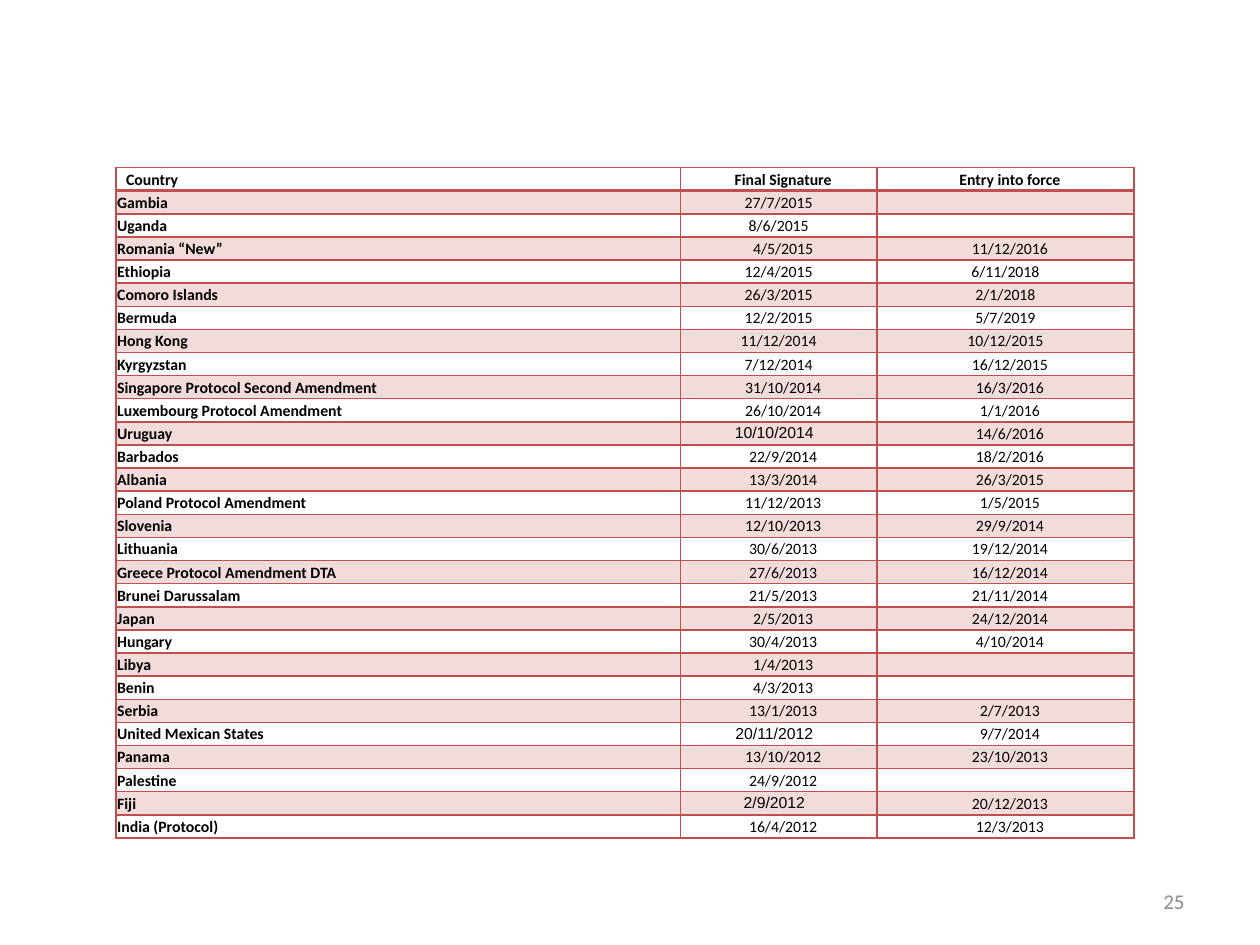
from lxml.etree import SubElement
from pptx import Presentation
from pptx.dml.color import RGBColor
from pptx.enum.text import MSO_ANCHOR as ANCHOR, PP_ALIGN as ALIGN
from pptx.oxml.ns import qn
from pptx.util import Inches, Pt

FONT = "Calibri"
RED, BLACK, GRAY = "C0504D", "000000", "8C8C8C"
HEADINGS = ("Country", "Final Signature", "Entry into force")
TREATIES = [
    ("Gambia", "27/7/2015", ""),
    ("Uganda", "8/6/2015", ""),
    ("Romania “New”", "4/5/2015", "11/12/2016"),
    ("Ethiopia", "12/4/2015", "6/11/2018"),
    ("Comoro Islands", "26/3/2015", "2/1/2018"),
    ("Bermuda", "12/2/2015", "5/7/2019"),
    ("Hong Kong", "11/12/2014", "10/12/2015"),
    ("Kyrgyzstan", "7/12/2014", "16/12/2015"),
    ("Singapore Protocol Second Amendment", "31/10/2014", "16/3/2016"),
    ("Luxembourg Protocol Amendment", "26/10/2014", "1/1/2016"),
    ("Uruguay", "10/10/2014", "14/6/2016"),
    ("Barbados", "22/9/2014", "18/2/2016"),
    ("Albania", "13/3/2014", "26/3/2015"),
    ("Poland Protocol Amendment", "11/12/2013", "1/5/2015"),
    ("Slovenia", "12/10/2013", "29/9/2014"),
    ("Lithuania", "30/6/2013", "19/12/2014"),
    ("Greece Protocol Amendment DTA", "27/6/2013", "16/12/2014"),
    ("Brunei Darussalam", "21/5/2013", "21/11/2014"),
    ("Japan", "2/5/2013", "24/12/2014"),
    ("Hungary", "30/4/2013", "4/10/2014"),
    ("Libya", "1/4/2013", ""),
    ("Benin", "4/3/2013", ""),
    ("Serbia", "13/1/2013", "2/7/2013"),
    ("United Mexican States", "20/11/2012", "9/7/2014"),
    ("Panama", "13/10/2012", "23/10/2013"),
    ("Palestine", "24/9/2012", ""),
    ("Fiji", "2/9/2012", "20/12/2013"),
    ("India (Protocol)", "16/4/2012", "12/3/2013"),
]
FLUSH_SIGNATURES = {"Gambia", "Uganda", "Ethiopia", "Comoro Islands", "Bermuda",
                    "Hong Kong", "Kyrgyzstan"}
FLUSH_ENTRIES = {"Ethiopia", "Comoro Islands", "Bermuda", "Hong Kong"}
RTL_SIGNATURES = {"Uruguay", "United Mexican States", "Fiji"}


def rgb(color):
    """Turn a hex string into a colour."""
    return RGBColor.from_string(color)


def add_run(p, text, size, color, bold=False):
    """Add one formatted run to a paragraph."""
    r = p.add_run()
    r.text = text
    r.font.name, r.font.size, r.font.bold = FONT, Pt(size), bold
    r.font.color.rgb = rgb(color)
    return r


def set_borders(cell, top, bottom):
    """Draw the four borders of a cell."""
    tc_pr = cell._tc.get_or_add_tcPr()
    for side, width in (("L", 1), ("R", 1), ("T", top), ("B", bottom)):
        ln = SubElement(tc_pr, qn(f"a:ln{side}"), w=str(Pt(width)))
        fill = SubElement(ln, qn("a:solidFill"))
        SubElement(fill, qn("a:srgbClr"), val=RED)


def set_fill(cell, banded):
    """Tint a banded cell and leave the others clear."""
    if not banded:
        cell.fill.background()
        return
    cell.fill.solid()
    cell.fill.fore_color.rgb = rgb(RED)
    color = cell._tc.tcPr.find(f"{qn('a:solidFill')}/{qn('a:srgbClr')}")
    SubElement(color, qn("a:alpha"), val="20000")


def set_text(cell, text, align, bold, indented, rtl):
    """Write the single paragraph of a cell."""
    cell.margin_left = cell.margin_right = Inches(0.01)
    cell.margin_top = cell.margin_bottom = Inches(0.01)
    p = cell.text_frame.paragraphs[0]
    if not text:
        SubElement(p._p, qn("a:endParaRPr"), sz="900")
        return
    p.alignment, p.line_spacing = align, 1.07
    p_pr = p._p.get_or_add_pPr()
    if indented:
        p_pr.set("marL", str(Inches(0.07)))
    r = add_run(p, text, 9, BLACK, bold)
    if rtl:
        p_pr.set("rtl", "1")
        SubElement(r._r.get_or_add_rPr(), qn("a:cs"), typeface="Arial")


def is_indented(row, col, country):
    """Tell whether the text of a cell has a left indent."""
    if row == 0:
        return True
    if col == 0:
        return False
    return country not in (FLUSH_SIGNATURES if col == 1 else FLUSH_ENTRIES)


def add_treaty_table(slide):
    """Add the table of treaties and their dates."""
    rows = [HEADINGS] + TREATIES
    frame = slide.shapes.add_table(len(rows), len(HEADINGS), Inches(0.92), Inches(1.33),
                                   Inches(8.08), Inches(5.33))
    table = frame.table
    table.first_row = table.horz_banding = False
    for column, width in zip(table.columns, (4.48, 1.56, 2.04)):
        column.width = Inches(width)
    for i, values in enumerate(rows):
        table.rows[i].height = Inches(5.33 / len(rows))
        for j, text in enumerate(values):
            cell = table.cell(i, j)
            set_borders(cell, 2 if i == 1 else 1, 2 if i == 0 else 1)
            set_fill(cell, i % 2 == 1)
            set_text(cell, text, ALIGN.CENTER if j else ALIGN.LEFT, i == 0 or j == 0,
                     is_indented(i, j, values[0]),
                     j == 1 and values[0] in RTL_SIGNATURES)


def add_page_number(slide, text):
    """Add the page number at the lower right."""
    sp = slide.shapes.add_textbox(Inches(7.17), Inches(6.95), Inches(2.33), Inches(0.4))
    tf = sp.text_frame
    tf.word_wrap, tf.vertical_anchor = True, ANCHOR.MIDDLE
    p = tf.paragraphs[0]
    p.alignment = ALIGN.RIGHT
    add_run(p, text, 12, GRAY)


def main():
    """Build and save the slide."""
    prs = Presentation()
    prs.slide_width, prs.slide_height = Inches(10), Inches(7.5)
    slide = prs.slides.add_slide(prs.slide_layouts[6])
    add_page_number(slide, "25")
    add_treaty_table(slide)
    prs.save("out.pptx")


if __name__ == "__main__":
    main()
